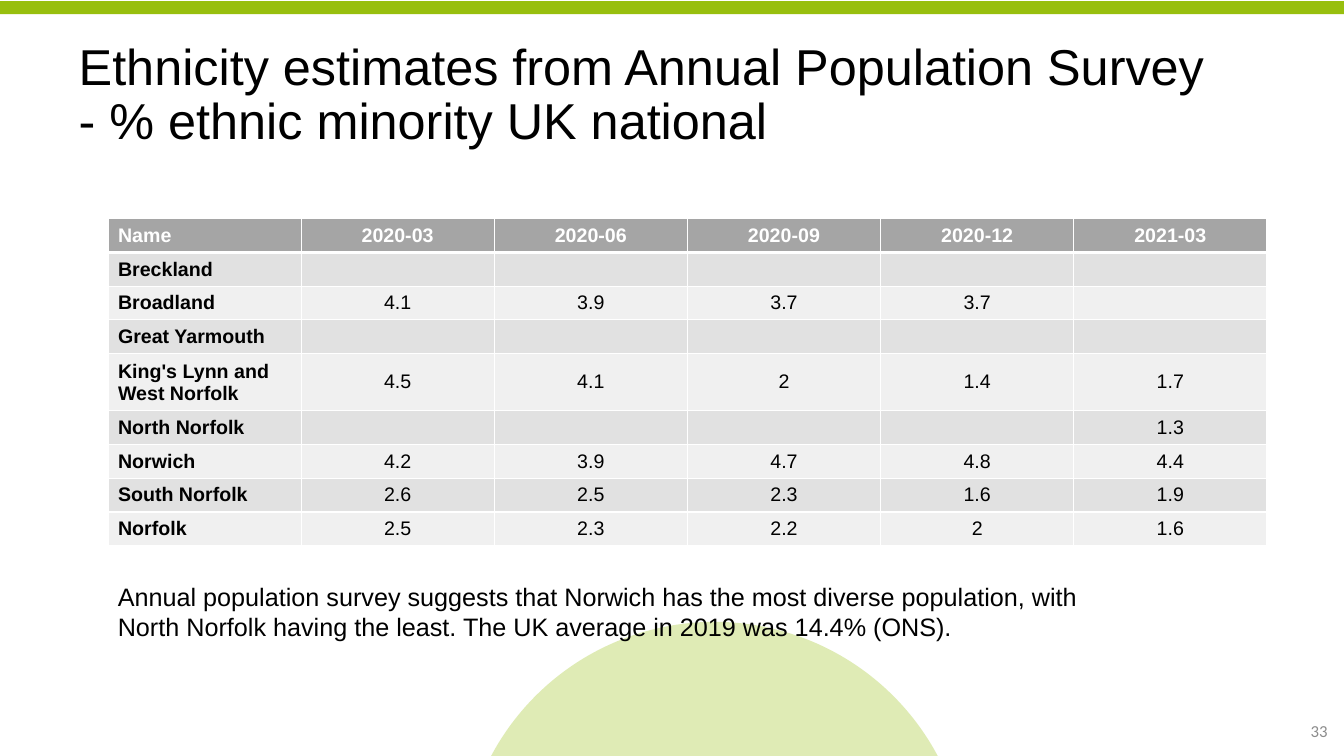
from lxml import etree
from pptx import Presentation
from pptx.dml.color import RGBColor
from pptx.enum.shapes import MSO_SHAPE
from pptx.enum.text import MSO_ANCHOR, PP_ALIGN
from pptx.oxml.ns import qn
from pptx.util import Cm, Pt

RECTANGLE, OVAL = MSO_SHAPE.RECTANGLE, MSO_SHAPE.OVAL
TOP, MIDDLE = MSO_ANCHOR.TOP, MSO_ANCHOR.MIDDLE
LEFT, CENTER, RIGHT = PP_ALIGN.LEFT, PP_ALIGN.CENTER, PP_ALIGN.RIGHT
TITLE_ONLY = 5

COLORS = {
    "bar": "98BF0E",
    "circle": "97BF0D",
    "text": "000000",
    "number": "8C8C8C",
    "white": "FFFFFF",
    "header": "A5A5A5",
    "odd_row": "E1E1E1",
    "even_row": "F0F0F0",
}
SLIDE_WIDTH, SLIDE_HEIGHT = 33.87, 19.05
TITLE = "Ethnicity estimates from Annual Population Survey - % ethnic minority UK national"
COMMENT = (
    "Annual population survey suggests that Norwich has the most diverse population, "
    "with North Norfolk having the least. The UK average in 2019 was 14.4% (ONS)."
)
TABLE_ROWS = [
    ["Name", "2020-03", "2020-06", "2020-09", "2020-12", "2021-03"],
    ["Breckland", "", "", "", "", ""],
    ["Broadland", "4.1", "3.9", "3.7", "3.7", ""],
    ["Great Yarmouth", "", "", "", "", ""],
    ["King's Lynn and West Norfolk", "4.5", "4.1", "2", "1.4", "1.7"],
    ["North Norfolk", "", "", "", "", "1.3"],
    ["Norwich", "4.2", "3.9", "4.7", "4.8", "4.4"],
    ["South Norfolk", "2.6", "2.5", "2.3", "1.6", "1.9"],
    ["Norfolk", "2.5", "2.3", "2.2", "2", "1.6"],
]
ROW_HEIGHT, TALL_ROW, TALL_ROW_HEIGHT = 0.85, 4, 1.44


def color(name):
    """Return the named colour."""
    return RGBColor.from_string(COLORS[name])


def format_text(text_frame, size, color_name, font="Arial", align=LEFT, bold=False):
    """Format every paragraph and run of a text frame."""
    for paragraph in text_frame.paragraphs:
        paragraph.alignment = align
        for run in paragraph.runs:
            run.font.name = font
            run.font.size = Pt(size)
            run.font.bold = bold
            run.font.color.rgb = color(color_name)


def add_plain_shape(slide, kind, box, color_name, opacity=100):
    """Add a filled shape without outline or shadow."""
    shape = slide.shapes.add_shape(kind, *map(Cm, box))
    shape.shadow.inherit = False
    shape.fill.solid()
    shape.fill.fore_color.rgb = color(color_name)
    shape.line.fill.background()
    if opacity < 100:
        fill_color = shape.fill._xPr.find(qn("a:solidFill"))[0]
        etree.SubElement(fill_color, qn("a:alpha"), val=str(opacity * 1000))


def add_decoration(slide, box):
    """Draw the top bar and the circle that rises from the bottom of the box."""
    left, top, width, height = box
    add_plain_shape(slide, RECTANGLE, (left, top + 0.03, width, 0.33), "bar")
    circle_box = (left + 11.63, top + height - 3.38, 12.75, 12.75)
    add_plain_shape(slide, OVAL, circle_box, "circle", 30)


def place_title(slide, box):
    """Move, fill and format the title placeholder."""
    title = slide.shapes.title
    title.left, title.top, title.width, title.height = map(Cm, box)
    title.text_frame.text = TITLE
    title.text_frame.word_wrap = True
    title.text_frame.vertical_anchor = MIDDLE
    title.text_frame.paragraphs[0].line_spacing = 0.9
    format_text(title.text_frame, 36, "text")


def add_text(slide, box, text, anchor, **text_format):
    """Add a wrapping text box."""
    text_frame = slide.shapes.add_textbox(*map(Cm, box)).text_frame
    text_frame.word_wrap = True
    text_frame.vertical_anchor = anchor
    text_frame.text = text
    format_text(text_frame, **text_format)


def add_borders(cell, bottom_width):
    """Give a cell white borders."""
    properties = cell._tc.get_or_add_tcPr()
    for side, width in (("L", 1), ("R", 1), ("T", 1), ("B", bottom_width)):
        line = etree.SubElement(properties, qn(f"a:ln{side}"), w=str(Pt(width)))
        fill = etree.SubElement(line, qn("a:solidFill"))
        etree.SubElement(fill, qn("a:srgbClr"), val=COLORS["white"])


def format_cell(cell, row, column):
    """Style a cell according to its row and column."""
    header = row == 0
    add_borders(cell, 3 if header else 1)
    cell.fill.solid()
    cell.fill.fore_color.rgb = color(
        "header" if header else "odd_row" if row % 2 else "even_row"
    )
    cell.vertical_anchor = MIDDLE
    format_text(
        cell.text_frame,
        14,
        "white" if header else "text",
        align=CENTER if column else LEFT,
        bold=header or column == 0,
    )
    if not cell.text_frame.text:
        paragraph = cell.text_frame.paragraphs[0]
        etree.SubElement(paragraph._p, qn("a:endParaRPr"), sz="1400")


def add_estimates(slide, box):
    """Add the table of estimates by district and survey date."""
    table = slide.shapes.add_table(
        len(TABLE_ROWS), len(TABLE_ROWS[0]), *map(Cm, box)
    ).table
    for row, values in enumerate(TABLE_ROWS):
        table.rows[row].height = Cm(TALL_ROW_HEIGHT if row == TALL_ROW else ROW_HEIGHT)
        for column, value in enumerate(values):
            cell = table.cell(row, column)
            cell.text_frame.text = value
            format_cell(cell, row, column)


def main():
    """Build and save the slide."""
    presentation = Presentation()
    presentation.slide_width = Cm(SLIDE_WIDTH)
    presentation.slide_height = Cm(SLIDE_HEIGHT)
    slide = presentation.slides.add_slide(presentation.slide_layouts[TITLE_ONLY])
    add_decoration(slide, (0, 0, SLIDE_WIDTH, SLIDE_HEIGHT))
    place_title(slide, (1.73, 0.58, 29.21, 3.68))
    add_text(slide, (26.09, 17.91, 7.62, 1.02), "33", MIDDLE,
             size=12, color_name="number", font="Calibri", align=RIGHT)
    add_text(slide, (2.72, 14.53, 26.31, 1.8), COMMENT, TOP, size=18, color_name="text")
    add_estimates(slide, (2.72, 5.51, 29.21, 8.24))
    presentation.save("out.pptx")


if __name__ == "__main__":
    main()
